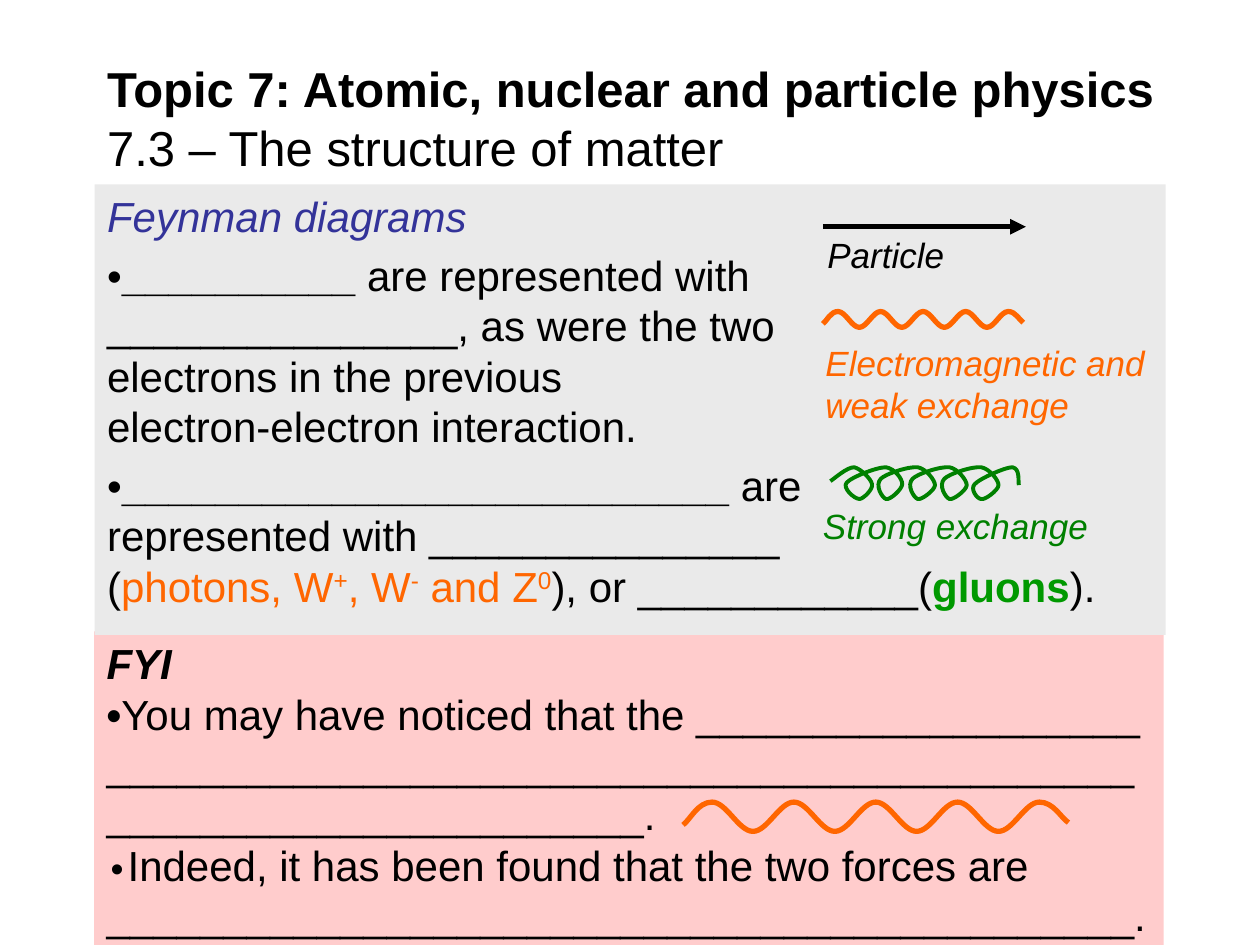
from dataclasses import dataclass

from lxml.etree import SubElement as Sub
from pptx import Presentation as Deck
from pptx.dml.color import RGBColor as Rgb
from pptx.enum.shapes import MSO_CONNECTOR as Link, MSO_SHAPE as Form
from pptx.enum.text import MSO_ANCHOR as Anchor, MSO_AUTO_SIZE as Fit, PP_ALIGN as Align
from pptx.oxml.ns import qn
from pptx.util import Cm, Pt

BLACK = Rgb(0x00, 0x00, 0x00)
BLUE = Rgb(0x33, 0x33, 0x99)
ORANGE = Rgb(0xFF, 0x66, 0x00)
GREEN = Rgb(0x00, 0x80, 0x00)
LEAF = Rgb(0x00, 0x99, 0x00)
GREY = Rgb(0xEA, 0xEA, 0xEA)
PINK = Rgb(0xFF, 0xCC, 0xCC)

Dot = tuple[float, float]


@dataclass
class Box:
    left: float
    top: float
    width: float
    height: float

    def cm(self) -> list[Cm]:
        return [Cm(v) for v in (self.left, self.top, self.width, self.height)]


@dataclass
class Bit:
    text: str
    color: Rgb = BLACK
    bold: bool = False
    ital: bool = False
    raised: bool = False
    size: float | None = None
    font: str = "Arial"


@dataclass
class Label:
    text: str
    box: Box
    color: Rgb


TITLE = [[Bit("Topic 7: Atomic, nuclear and particle physics\v", bold=True),
          Bit("7.3 – The structure of matter")]]
FEYNMAN = [
    [Bit("Feynman diagrams", BLUE, ital=True)],
    [Bit("•"), Bit("__________ ", bold=True),
     Bit("are represented with\v_______________, as were the two\v"
         "electrons in the previous\velectron-electron interaction.")],
    [Bit("•"), Bit("__________________________ ", bold=True),
     Bit("are\vrepresented with _______________\v("),
     Bit("photons, W", ORANGE), Bit("+", ORANGE, raised=True),
     Bit(", W", ORANGE), Bit("-", ORANGE, raised=True),
     Bit(" and Z", ORANGE), Bit("0", ORANGE, raised=True),
     Bit("), or ____________("), Bit("gluons", LEAF, bold=True), Bit(").")],
]
FYI = [
    [Bit("FYI", bold=True, ital=True)],
    [Bit("•", bold=True),
     Bit("You may have noticed that the " + "_" * 19 + " " + "_" * 67 + ".")],
    [Bit("•", bold=True, size=20, font="Courier New"),
     Bit("Indeed, it has been found that the two forces are " + "_" * 44 + ".")],
]
WEAK = Label("Electromagnetic and weak exchange", Box(16.39, 6.76, 8.31, 1.96), ORANGE)
STRONG = Label("Strong exchange", Box(16.34, 10.04, 7.34, 1.09), GREEN)
MATTER = Label("Particle", Box(16.43, 4.58, 7.34, 1.09), BLACK)
SMALL = Box(16.59, 6.28, 4.04, 0.32)
LARGE = Box(13.77, 16.17, 7.77, 0.59)

PITCH, LOOPS = 0.64, 3
BASE = (17.86, 10.06)
HEAD = [(-1.12, -0.36), (-1.04, -0.41), (-0.79, -0.64), (-0.64, -0.64),
        (-0.51, -0.61), (-0.3, -0.41), (-0.28, -0.3),
        (-0.25, -0.2), (-0.46, 0), (-0.53, 0),
        (-0.64, 0), (-0.89, -0.23), (-0.79, -0.33),
        (-0.71, -0.43), (-0.2, -0.64), (0, -0.64),
        (0.18, -0.61), (0.33, -0.41), (0.33, -0.3),
        (0.33, -0.2), (0.08, 0.03), (0, 0)]
LOOP = [(-0.08, -0.03), (-0.23, -0.28), (-0.1, -0.41),
        (0, -0.51), (0.46, -0.66), (0.64, -0.64),
        (0.81, -0.61), (0.99, -0.38), (0.99, -0.28),
        (0.99, -0.18), (0.71, 0.03), (0.64, 0)]
TAIL = [(-0.08, 0), (-0.23, -0.2), (-0.13, -0.3),
        (-0.03, -0.41), (0.48, -0.64), (0.63, -0.64),
        (0.79, -0.61), (0.74, -0.36), (0.76, -0.28)]


def write(frame, paras: list[list[Bit]], *, size: float = 24,
          anchor=Anchor.TOP, gap: float = 0) -> None:
    frame.word_wrap = True
    frame.vertical_anchor = anchor
    for n, bits in enumerate(paras):
        para = frame.add_paragraph() if n else frame.paragraphs[0]
        para.alignment = Align.LEFT
        para.space_before = Pt(gap if n else 0)
        for bit in bits:
            for k, part in enumerate(bit.text.split("\v")):
                if k:
                    para.add_line_break()
                if not part:
                    continue
                run = para.add_run()
                run.text = part
                font = run.font
                font.name, font.size = bit.font, Pt(bit.size or size)
                font.bold, font.italic = bit.bold, bit.ital
                font.color.rgb = bit.color
                if bit.raised:
                    run._r.get_or_add_rPr().set("baseline", "30000")


def panel(shapes, box: Box, fill: Rgb, paras: list[list[Bit]], gap: float = 0) -> None:
    shape = shapes.add_shape(Form.RECTANGLE, *box.cm())
    shape.shadow.inherit = False
    shape.fill.solid()
    shape.fill.fore_color.rgb = fill
    shape.line.fill.background()
    write(shape.text_frame, paras, gap=gap)


def note(shapes, label: Label) -> None:
    frame = shapes.add_textbox(*label.box.cm()).text_frame
    write(frame, [[Bit(label.text, label.color, ital=True)]], size=20)
    frame.auto_size = Fit.SHAPE_TO_FIT_TEXT


def curve(shapes, knots: list[Dot], color: Rgb, width: float) -> None:
    pts = [(Cm(x), Cm(y)) for x, y in knots]
    pen = shapes.build_freeform(*pts[0])
    pen.add_line_segments(pts[1:], close=False)
    shape = pen.convert_to_shape()
    shape.shadow.inherit = False
    shape.fill.background()
    shape.line.color.rgb = color
    shape.line.width = Pt(width)
    legs = list(shape._element.iter(qn("a:lnTo")))
    for n in range(0, len(legs), 3):
        bend = Sub(legs[n].getparent(), qn("a:cubicBezTo"))
        for leg in legs[n:n + 3]:
            bend.append(leg[0])
            leg.getparent().remove(leg)


def ripple(box: Box) -> list[Dot]:
    half = 0.5 / 4.71
    lead, pull = 0.71 * half, 0.35 * half
    peaks = [(lead + n * half, n % 2) for n in range(9)]
    knots = [(0, 0.78), (0.25 * lead, 0.6), (lead - pull, 0), peaks[0]]
    for (x, y), (u, v) in zip(peaks, peaks[1:]):
        knots += [(x + pull, y), (u - pull, v), (u, v)]
    last = peaks[-1][0]
    knots += [(last + pull, 0), (1 - 0.25 * lead, 0.55), (1, 0.7)]
    return [(box.left + x * box.width, box.top + y * box.height) for x, y in knots]


def coil() -> list[Dot]:
    parts = [(0, HEAD), *((n, LOOP) for n in range(LOOPS)), (LOOPS, TAIL)]
    return [(BASE[0] + n * PITCH + x, BASE[1] + y) for n, part in parts for x, y in part]


def arrow(shapes, left: float, right: float, y: float) -> None:
    line = shapes.add_connector(Link.STRAIGHT, Cm(left), Cm(y), Cm(right), Cm(y))
    line.line.color.rgb = BLACK
    line.line.width = Pt(3)
    Sub(line.line._get_or_add_ln(), qn("a:tailEnd"), type="triangle")
    Sub(line._element.spPr, qn("a:effectLst"))


def main() -> None:
    deck = Deck()
    deck.slide_width, deck.slide_height = Cm(25.4), Cm(19.05)
    shapes = deck.slides.add_slide(deck.slide_layouts[6]).shapes
    panel(shapes, Box(1.9, 12.73, 21.56, 6.32), PINK, FYI)
    panel(shapes, Box(1.91, 3.72, 21.59, 9.08), GREY, FEYNMAN, gap=4.8)
    title = shapes.add_textbox(*Box(1.91, 1.22, 22.58, 2.31).cm())
    write(title.text_frame, TITLE, size=28, anchor=Anchor.MIDDLE)
    curve(shapes, ripple(SMALL), ORANGE, 3)
    note(shapes, WEAK)
    curve(shapes, coil(), GREEN, 2.25)
    note(shapes, STRONG)
    arrow(shapes, 16.59, 20.68, 4.57)
    note(shapes, MATTER)
    curve(shapes, ripple(LARGE), ORANGE, 3)
    deck.save("out.pptx")


if __name__ == "__main__":
    main()
